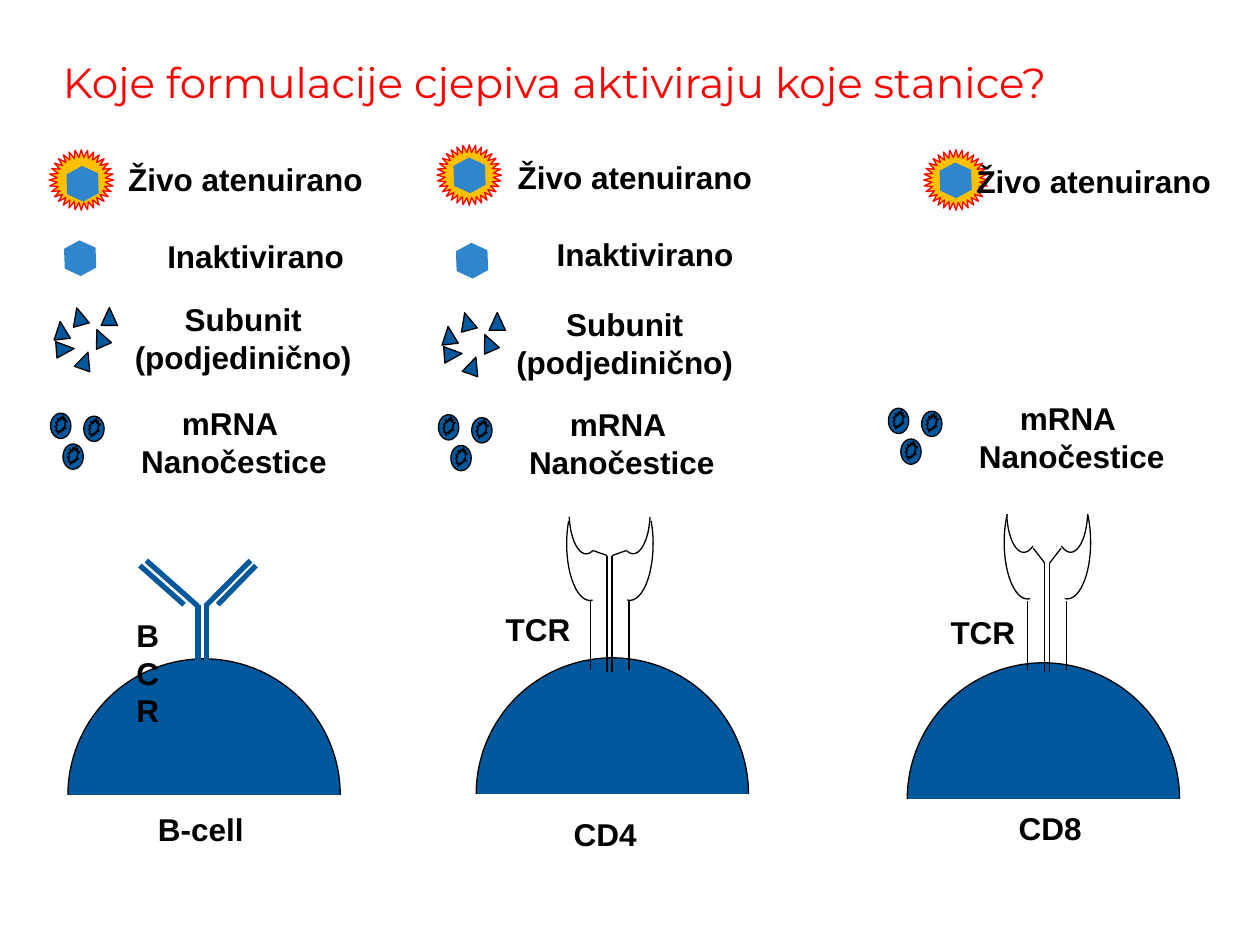
from pptx import Presentation
from pptx.dml.color import RGBColor as RGB
from pptx.enum.shapes import MSO_CONNECTOR as Link, MSO_SHAPE as Kind
from pptx.enum.text import MSO_ANCHOR as Anchor, PP_ALIGN as Align
from pptx.oxml.ns import qn
from pptx.util import Cm, Pt
from lxml.etree import SubElement

HUES = {
    "red": "FF0000",
    "gold": "FFC000",
    "navy": "00589C",
    "sky": "2F86CC",
    "black": "000000",
}
SUBUNITS = [(0.36, 0, 344.7), (0.79, 0.43, 336.4), (0.08, 0.66, 85.6),
            (0.48, 0.89, 19.4), (0.97, 0, 0), (0, 0.28, 353.2)]
BEADS = [(0.67, 0.06), (0, 0), (0.25, 0.62)]
ANTIBODY = [(4.17, 14.07, 4.17, 12.19), (5.05, 11.3, 4.14, 12.22),
            (5.16, 11.4, 4.39, 12.19), (3.99, 14.07, 3.99, 12.19),
            (2.95, 11.3, 3.99, 12.22), (2.82, 11.4, 3.71, 12.19)]


def hue(name):
    return RGB.from_string(HUES[name])


def add_form(slide, kind, x, y, w, h, fill="navy", edge="black", turn=0):
    form = slide.shapes.add_shape(kind, Cm(x), Cm(y), Cm(w), Cm(h))
    form.shadow.inherit = False
    form.rotation = turn
    if fill:
        form.fill.solid()
        form.fill.fore_color.rgb = hue(fill)
    else:
        form.fill.background()
    form.line.color.rgb = hue(edge)
    form.line.width = Pt(0.75)
    return form


def add_arc(slide, x, y, w, h, start, end, fill=None, flip=False):
    arc = add_form(slide, Kind.ARC, x, y, w, h, fill, turn=270)
    arc.adjustments[0] = start * 0.6
    arc.adjustments[1] = end * 0.6
    if flip:
        arc.element.spPr.xfrm.set("flipV", "1")


def add_line(slide, x1, y1, x2, y2, color="black", width=0.75):
    line = slide.shapes.add_connector(
        Link.STRAIGHT, Cm(x1), Cm(y1), Cm(x2), Cm(y2))
    line.line.color.rgb = hue(color)
    line.line.width = Pt(width)
    SubElement(line.element.spPr, qn("a:effectLst"))


def add_run(para, text, size, font, color, bold):
    run = para.add_run()
    run.text = text
    run.font.size = Pt(size)
    run.font.name = font
    run.font.bold = bold
    run.font.color.rgb = hue(color)


def add_label(slide, text, x, y, w, h=1.02, wrap=False):
    frame = slide.shapes.add_textbox(Cm(x), Cm(y), Cm(w), Cm(h)).text_frame
    frame.word_wrap = wrap
    for i, part in enumerate(text.split("\n")):
        para = frame.add_paragraph() if i else frame.paragraphs[0]
        para.alignment = Align.CENTER
        for j, piece in enumerate(part.split("\v")):
            if j:
                para.add_line_break()
            add_run(para, piece, 18, "Arial", "black", True)


def add_title(slide, text):
    box = slide.shapes.add_textbox(Cm(1.27), Cm(1.14), Cm(23.32), Cm(2.57))
    frame = box.text_frame
    frame.word_wrap = True
    frame.vertical_anchor = Anchor.TOP
    frame.margin_left = frame.margin_right = 0
    frame.margin_top = frame.margin_bottom = 0
    add_run(frame.paragraphs[0], text, 24, "Montserrat", "red", False)


def add_core(slide, x, y):
    add_form(slide, Kind.HEXAGON, x, y, 0.69, 0.61, "sky", "sky", 88)


def add_virus(slide, x, y, core):
    add_form(slide, Kind.STAR_32_POINT, x, y, 1.3, 1.22, "gold", "red")
    add_core(slide, *core)


def add_subunits(slide, x, y):
    for dx, dy, turn in SUBUNITS:
        add_form(slide, Kind.ISOSCELES_TRIANGLE, x + dx, y + dy,
                 0.33, 0.36, turn=turn)


def add_beads(slide, x, y):
    for dx, dy in BEADS:
        add_form(slide, Kind.OVAL, x + dx, y + dy, 0.41, 0.51)
        add_form(slide, Kind.EXPLOSION2, x + dx + 0.09, y + dy + 0.04,
                 0.25, 0.38)


def add_dome(slide, x, y):
    add_arc(slide, x, y, 5.49, 5.49, 270, 90, "navy")


def add_tcr(slide, mid, level, hub, tip, start, end):
    reach, top = tip
    for side in (-1, 1):
        stem, rail = mid + side * 0.05, mid + side * 0.39
        add_line(slide, rail, 13.51, rail, 12.12)
        add_line(slide, stem, 13.54, stem, hub)
        add_line(slide, stem, hub, mid + side * reach, top)
        add_arc(slide, mid + side * 0.4 - 1.14, level - 0.47, 2.29, 0.94,
                177.3, end, flip=side > 0)
        add_arc(slide, mid + side * 0.47 - 0.84, level - 0.98, 1.68, 0.69,
                start, 254.66, flip=side > 0)


def main():
    deck = Presentation()
    deck.slide_width, deck.slide_height = Cm(25.4), Cm(19.05)
    slide = deck.slides.add_slide(deck.slide_layouts[6])

    add_title(slide, "Koje formulacije cjepiva aktiviraju koje stanice?")

    for x, y in [(1.37, 13.28), (9.6, 13.26), (18.29, 13.36)]:
        add_dome(slide, x, y)
    for ends in ANTIBODY:
        add_line(slide, *ends, "navy", 3)
    add_tcr(slide, 12.29, 10.96, 11.2, (0.33, 11.1), 170.2, 316.9)
    add_tcr(slide, 21.11, 10.93, 11.35, (0.28, 11.05), 165.5, 324.3)

    add_virus(slide, 0.99, 3.02, (1.32, 3.4))
    add_virus(slide, 8.81, 2.92, (9.12, 3.23))
    add_virus(slide, 18.62, 3.02, (18.92, 3.33))
    for x, y in [(1.27, 4.9), (9.17, 4.95)]:
        add_core(slide, x, y)
    for x, y in [(1.07, 6.2), (8.89, 6.3)]:
        add_subunits(slide, x, y)
    for x, y in [(1.02, 8.33), (8.84, 8.36), (17.91, 8.23)]:
        add_beads(slide, x, y)

    for x, y in [(2.31, 3.1), (10.16, 3.07), (19.41, 3.15)]:
        add_label(slide, "Živo atenuirano", x, y, 5.28)
    for x, y in [(3.1, 4.65), (10.95, 4.62)]:
        add_label(slide, "Inaktivirano", x, y, 4.11)
    for x, y in [(2.44, 5.92), (10.13, 6.02)]:
        add_label(slide, "Subunit\v(podjedinično)", x, y, 4.93, 1.8)
    for x, y in [(2.57, 8.03), (10.39, 8.05), (19.46, 7.92)]:
        add_label(slide, "mRNA \nNanočestice", x, y, 4.29, 1.8)
    for x, y in [(9.93, 12.17), (18.9, 12.24)]:
        add_label(slide, "TCR", x, y, 1.83)
    add_label(slide, "BCR", 2.36, 12.29, 1.24, 0.69, wrap=True)
    add_label(slide, "B-cell", 2.92, 16.21, 2.26)
    add_label(slide, "CD4", 11.3, 16.31, 1.8)
    add_label(slide, "CD8", 20.27, 16.18, 1.8)

    deck.save("out.pptx")


if __name__ == "__main__":
    main()
